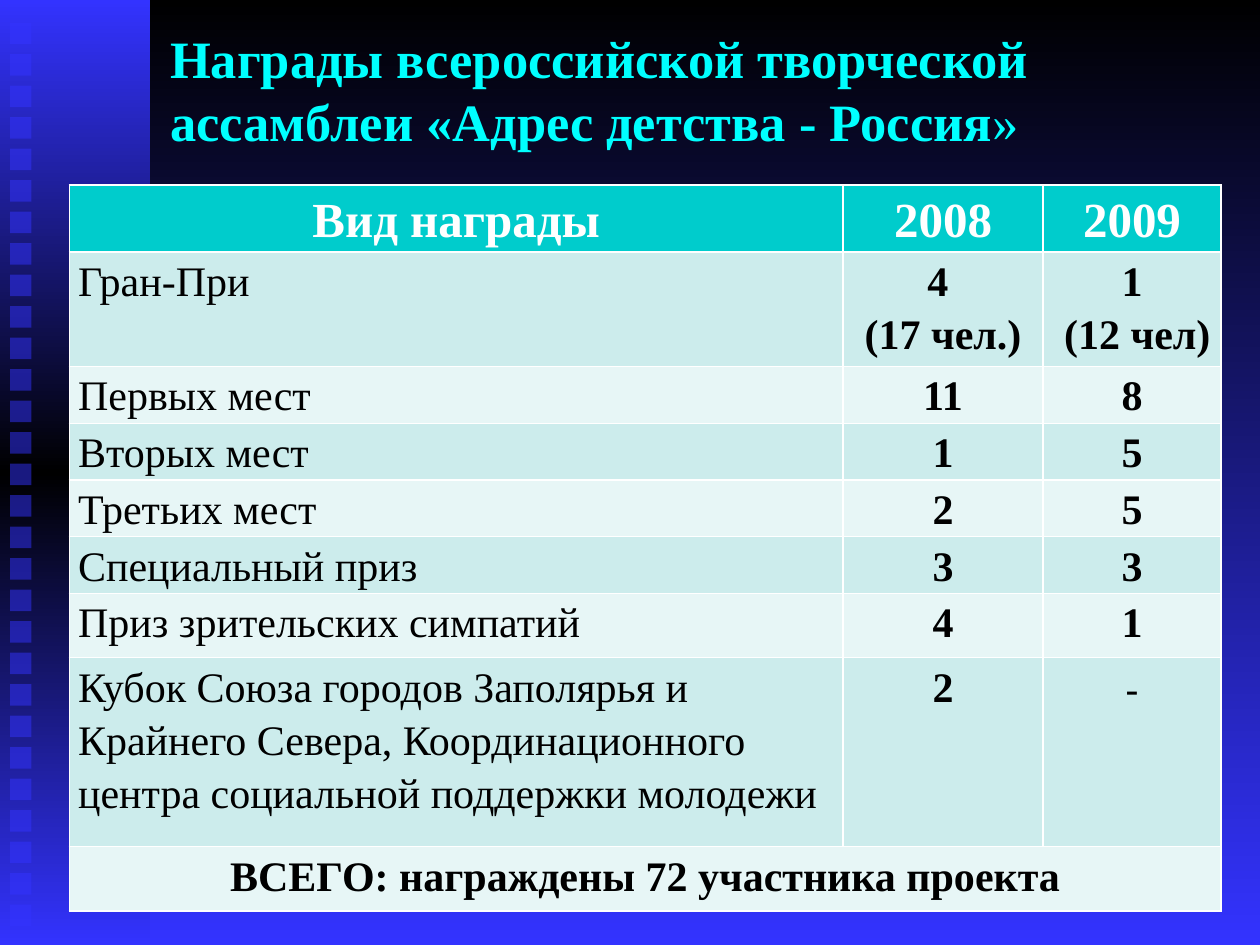
from lxml import etree
from pptx import Presentation, util as u
from pptx.dml.color import RGBColor
from pptx.enum import shapes, text
from pptx.oxml.ns import qn

BLACK = RGBColor(0x00, 0x00, 0x00)
WHITE = RGBColor(0xFF, 0xFF, 0xFF)
BLUE = RGBColor(0x33, 0x33, 0xFF)
CYAN = RGBColor(0x00, 0xFF, 0xFF)
TEAL = RGBColor(0x00, 0xCC, 0xCC)
MINT = RGBColor(0xCC, 0xEC, 0xEC)
PALE = RGBColor(0xE7, 0xF6, 0xF6)

FONT = "Times New Roman"
COLS = [6.14, 1.59, 1.41]
HEAD = ["Вид награды", "2008", "2009"]
# Row height, then the cell texts
ROWS = [
    (0.91, ["Гран-При", "4 \n(17 чел.)", "1\n (12 чел)"]),
    (0.45, ["Первых мест", "11", "8"]),
    (0.45, ["Вторых мест", "1", "5"]),
    (0.45, ["Третьих мест", "2", "5"]),
    (0.45, ["Специальный приз", "3", "3"]),
    (0.51, ["Приз зрительских симпатий", "4", "1"]),
    (1.5, ["Кубок Союза городов Заполярья и Крайнего Севера, "
           "Координационного центра социальной поддержки молодежи", "2", "-"]),
]
TOTAL = "ВСЕГО: награждены 72 участника проекта"


class Deck:
    def __init__(self, wide, high):
        self.show = Presentation()
        self.show.slide_width = u.Inches(wide)
        self.show.slide_height = u.Inches(high)
        self.page = self.show.slides.add_slide(self.show.slide_layouts[5])

    def blend(self, fill, root, tones):
        """Fill from top to bottom with evenly spaced colours."""
        fill.gradient()
        fill.gradient_angle = 270
        stops = next(root.iter(qn("a:gsLst")))
        for stop in list(stops):
            stops.remove(stop)
        for i, tone in enumerate(tones):
            place = str(100000 * i // (len(tones) - 1))
            stop = etree.SubElement(stops, qn("a:gs"), pos=place)
            etree.SubElement(stop, qn("a:srgbClr"), val=str(tone))

    def back(self, tones):
        fill = self.page.background.fill
        self.blend(fill, self.page._element.cSld, tones)

    def rect(self, *box):
        shape = self.page.shapes.add_shape(
            shapes.MSO_SHAPE.RECTANGLE, *map(u.Inches, box))
        shape.shadow.inherit = False
        shape.line.fill.background()
        return shape

    def band(self, tones, *box):
        shape = self.rect(*box)
        self.blend(shape.fill, shape._element.spPr, tones)

    def square(self, tone, alpha, *box):
        shape = self.rect(*box)
        shape.fill.solid()
        shape.fill.fore_color.rgb = tone
        color = next(shape._element.spPr.iter(qn("a:srgbClr")))
        etree.SubElement(color, qn("a:alpha"), val=str(alpha * 1000))

    def style(self, run, size, tone, bold, font=FONT):
        run.font.name = font
        run.font.size = u.Pt(size)
        run.font.bold = bold
        run.font.color.rgb = tone

    def title(self, words, close, *box):
        shape = self.page.shapes.title
        shape.left, shape.top, shape.width, shape.height = map(u.Inches, box)
        frame = shape.text_frame
        frame.word_wrap = True
        frame.auto_size = text.MSO_AUTO_SIZE.NONE
        frame.vertical_anchor = text.MSO_ANCHOR.MIDDLE
        frame.text = words
        para = frame.paragraphs[0]
        para.alignment = text.PP_ALIGN.LEFT
        para.add_run().text = close
        for run, bold in zip(para.runs, (True, False)):
            self.style(run, 30, CYAN, bold)

    def grid(self, cols, highs, left, top):
        shape = self.page.shapes.add_table(
            len(highs), len(cols), u.Inches(left), u.Inches(top),
            u.Inches(sum(cols)), u.Inches(sum(highs)))
        table = shape.table
        for col, wide in zip(table.columns, cols):
            col.width = u.Inches(wide)
        for row, high in zip(table.rows, highs):
            row.height = u.Inches(high)
        return table

    def cell(self, cell, words, back, size=24, tone=BLACK, bold=True,
             mid=True, font=FONT):
        cell.fill.solid()
        cell.fill.fore_color.rgb = back
        cell.margin_left = cell.margin_right = u.Inches(0.07)
        cell.margin_top = cell.margin_bottom = 0
        cell.text_frame.text = words
        for para in cell.text_frame.paragraphs:
            para.alignment = text.PP_ALIGN.CENTER if mid else text.PP_ALIGN.LEFT
            para.line_spacing = 1.15
            for run in para.runs:
                self.style(run, size, tone, bold, font)


def main():
    deck = Deck(10, 7.5)

    # Background, side band and its column of squares
    deck.back([BLACK, BLUE])
    deck.band([BLUE, BLACK, BLUE], 0, 0, 1.19, 7.5)
    for i in range(29):
        deck.square(BLUE, 50, 0.08, 0.18 + 0.25 * i, 0.17, 0.17)

    # Title, raised above the band
    deck.title("Награды всероссийской творческой ассамблеи "
               "«Адрес детства - Россия", "»", 1.25, 0, 8.5, 1.41)

    # Table: header, awards, total
    highs = [0.53] + [high for high, _ in ROWS] + [0.51]
    table = deck.grid(COLS, highs, 0.55, 1.47)
    for c, words in enumerate(HEAD):
        deck.cell(table.cell(0, c), words, TEAL, size=28, tone=WHITE)
    for r, (_, line) in enumerate(ROWS, 1):
        back = MINT if r % 2 else PALE
        for c, words in enumerate(line):
            dash = words == "-"
            deck.cell(table.cell(r, c), words, back, mid=c > 0,
                      bold=c > 0 and not dash,
                      font="Calibri" if dash else FONT)
    last = len(highs) - 1
    table.cell(last, 0).merge(table.cell(last, len(COLS) - 1))
    deck.cell(table.cell(last, 0), TOTAL, PALE)

    deck.show.save("out.pptx")


if __name__ == "__main__":
    main()
